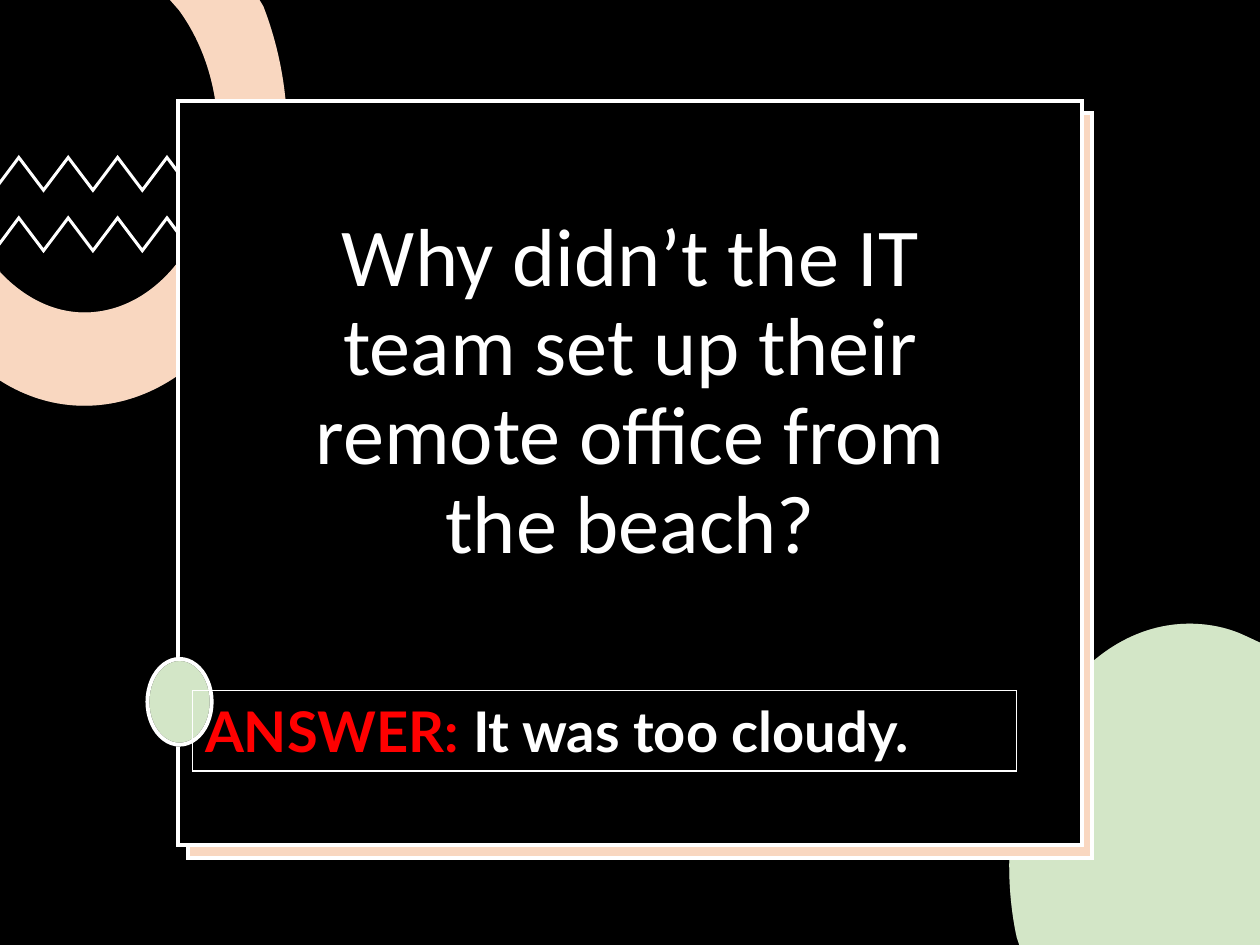
from dataclasses import dataclass

from lxml import etree
from pptx import Presentation
from pptx import util as u
from pptx.dml.color import RGBColor
from pptx.enum import shapes, text
from pptx.oxml.ns import qn


@dataclass(frozen=True)
class Theme:
    black: str = "000000"
    white: str = "FFFFFF"
    orange: str = "ED7D31"
    green: str = "70AD47"
    red: str = "FF0000"
    title_font: str = "Calibri"
    answer_font: str = "Lato"
    title_size: int = 47
    answer_size: int = 32
    border: float = 2.25
    hairline: float = 0.75
    tint: int = 30


def zigzag(y, step=0.196, depth=0.26, thickness=0.04):
    ridge = [(0.15 + step * i, y + depth * (i % 2)) for i in range(7)]
    under = [(x, py + thickness) for x, py in reversed(ridge)]
    return ridge + [(1.53, y + 0.27), (1.51, y + 0.29)] + under + [(0, y + 0.24), (0, y + 0.2)]


class Deck:
    """Builds styled elements on the current slide."""

    def __init__(self, theme):
        self.theme = theme
        self.prs = Presentation()
        self.prs.slide_width, self.prs.slide_height = u.Inches(10), u.Inches(7.5)
        self.s = self.prs.slides.add_slide(self.prs.slide_layouts[6])

    def paint(self, sp, fill=None, line=None, width=None, alpha=None):
        sp.shadow.inherit = False
        if fill:
            sp.fill.solid()
            sp.fill.fore_color.rgb = RGBColor.from_string(fill)
            if alpha:
                color = sp._element.spPr.find(qn("a:solidFill"))[0]
                etree.SubElement(color, qn("a:alpha")).set("val", str(alpha * 1000))
        else:
            sp.fill.background()
        if line:
            sp.line.color.rgb = RGBColor.from_string(line)
            sp.line.width = u.Pt(width or self.theme.border)
            ln = sp._element.spPr.find(qn("a:ln"))
            etree.SubElement(ln, qn("a:miter")).set("lim", "800000")
        else:
            sp.line.fill.background()
        return sp

    def shape(self, kind, box, **style):
        sp = self.s.shapes.add_shape(kind, *map(u.Inches, box))
        return self.paint(sp, **style)

    def freeform(self, segments, **style):
        start, *ends = [tuple(map(u.Inches, seg[-2:])) for seg in segments]
        builder = self.s.shapes.build_freeform(*start)
        builder.add_line_segments(ends, close=True)
        sp = builder.convert_to_shape()
        lines = list(sp._element.iter(qn("a:lnTo")))
        for node, seg in zip(lines, segments[1:]):
            if len(seg) == 6:
                self.bend(sp, node, seg)
        return self.paint(sp, **style)

    def bend(self, sp, node, seg):
        curve = etree.Element(qn("a:cubicBezTo"))
        for x, y in zip(seg[::2], seg[1::2]):
            pt = etree.SubElement(curve, qn("a:pt"))
            pt.set("x", str(u.Inches(x) - sp.left))
            pt.set("y", str(u.Inches(y) - sp.top))
        node.getparent().replace(node, curve)

    def tinted_freeform(self, segments, color):
        self.freeform(segments, fill=self.theme.white)
        self.freeform(segments, fill=color, alpha=self.theme.tint)

    def tinted_shape(self, kind, box, color):
        th = self.theme
        self.shape(kind, box, fill=th.white, line=th.black)
        self.shape(kind, box, fill=color, alpha=th.tint, line=th.white)

    def font(self, r, name, size, color, bold=False):
        r.font.name, r.font.size, r.font.bold = name, u.Pt(size), bold
        r.font.color.rgb = RGBColor.from_string(color)

    def title(self, box, words):
        tf = self.s.shapes.add_textbox(*map(u.Inches, box)).text_frame
        tf.word_wrap = True
        tf.vertical_anchor = text.MSO_ANCHOR.BOTTOM
        tf.text = words
        p = tf.paragraphs[0]
        p.alignment = text.PP_ALIGN.CENTER
        p.line_spacing = 0.9
        p.space_after = u.Pt(6)
        self.font(p.runs[0], self.theme.title_font, self.theme.title_size, self.theme.white)

    def answer(self, box, label, words):
        th = self.theme
        sp = self.shape(shapes.MSO_SHAPE.RECTANGLE, box, line=th.white, width=th.hairline)
        tf = sp.text_frame
        tf.word_wrap = True
        tf.auto_size = text.MSO_AUTO_SIZE.SHAPE_TO_FIT_TEXT
        tf.vertical_anchor = text.MSO_ANCHOR.TOP
        p = tf.paragraphs[0]
        p.alignment = text.PP_ALIGN.LEFT
        for part, color in ((label, th.red), (words, th.white)):
            r = p.add_run()
            r.text = part
            self.font(r, th.answer_font, th.answer_size, color, bold=True)


def main():
    th = Theme()
    deck = Deck(th)
    rect, oval = shapes.MSO_SHAPE.RECTANGLE, shapes.MSO_SHAPE.OVAL
    ring = [
        (1.35, 0), (2.06, 0), (2.09, 0.05),
        (2.21, 0.36, 2.28, 0.71, 2.28, 1.08),
        (2.28, 2.26, 1.56, 3.22, 0.67, 3.22),
        (0.45, 3.22, 0.24, 3.16, 0.05, 3.05),
        (0, 3.02), (0, 2.15), (0, 2.16),
        (0.19, 2.36, 0.42, 2.48, 0.67, 2.48),
        (1.26, 2.48, 1.73, 1.85, 1.73, 1.08),
        (1.73, 0.69, 1.61, 0.34, 1.42, 0.08)]
    corner_disc = [
        (9.44, 4.95), (9.59, 4.95, 9.74, 4.98, 9.87, 5.04),
        (10, 5.1), (10, 7.5), (8.09, 7.5), (8.07, 7.44),
        (8.03, 7.26, 8.01, 7.06, 8.01, 6.87),
        (8.01, 5.81, 8.65, 4.95, 9.44, 4.95)]

    deck.shape(rect, (0, 0, 10, 7.5), fill=th.black)
    for y in (1.23, 1.71):
        deck.freeform(zigzag(y), fill=th.white)
    deck.tinted_freeform(ring, th.orange)
    deck.tinted_freeform(corner_disc, th.green)
    deck.tinted_shape(rect, (1.49, 0.9, 7.18, 5.91), th.orange)
    deck.shape(rect, (1.41, 0.8, 7.18, 5.91), fill=th.black, line=th.white)
    deck.title((1.95, 1.47, 6.11, 3.11),
               "Why didn’t the IT team set up their remote office from the beach?")
    deck.tinted_shape(oval, (1.17, 5.23, 0.51, 0.68), th.green)
    deck.answer((1.53, 5.48, 6.54, 0.64), "ANSWER: ", "It was too cloudy.")
    deck.prs.save("out.pptx")


if __name__ == "__main__":
    main()
